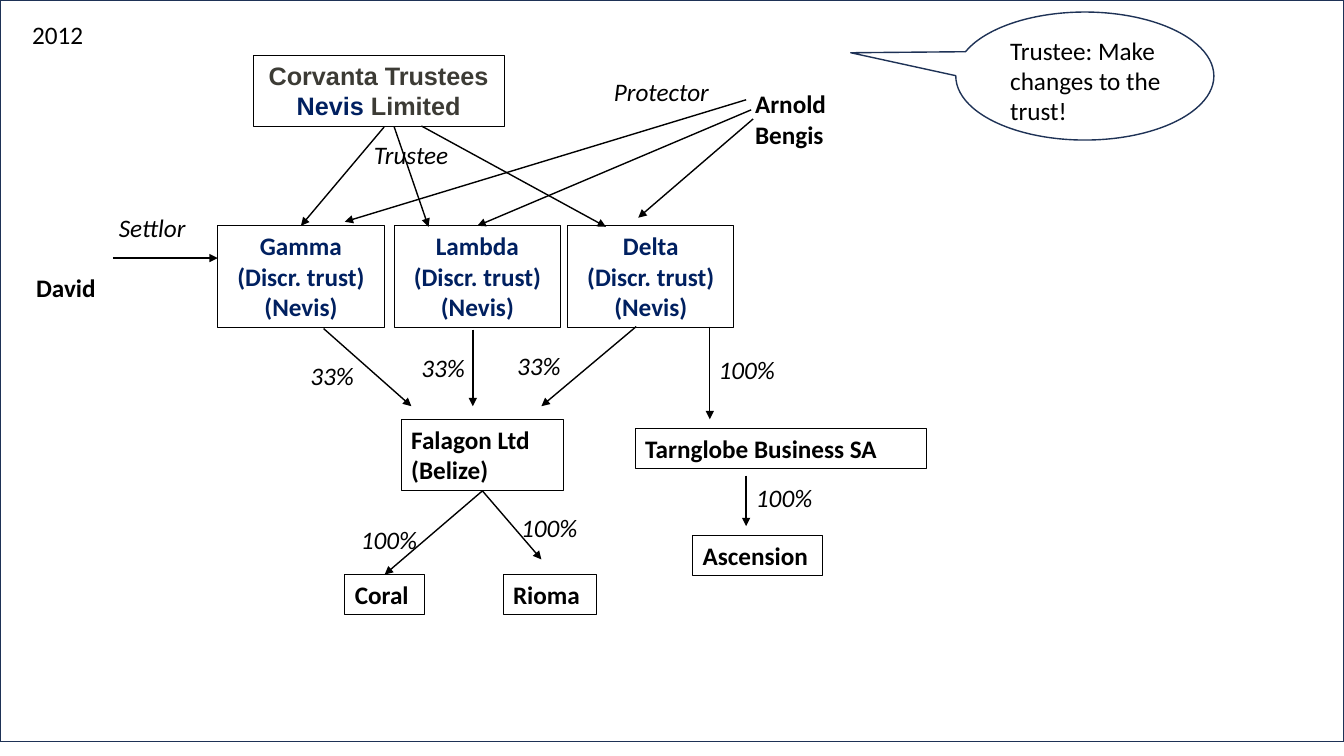
from lxml.etree import SubElement
from pptx import Presentation
from pptx.dml.color import RGBColor
from pptx.enum.shapes import MSO_CONNECTOR, MSO_SHAPE
from pptx.enum.text import MSO_ANCHOR, MSO_AUTO_SIZE, PP_ALIGN
from pptx.oxml.ns import qn
from pptx.util import Inches, Pt

COLORS = {"white": "FFFFFF", "black": "000000", "frame": "1E3256",
          "navy": "002060", "gray": "3C3B35"}

# Text formats
PLAIN = {"name": "Calibri", "size": Pt(18), "color": "black"}
BOLD = {**PLAIN, "bold": True}
ITALIC = {**PLAIN, "italic": True}
TRUST = {**BOLD, "color": "navy"}
TRUSTEE = {**BOLD, "name": "Arial", "color": "gray"}
TRUSTEE_PLACE = {**TRUSTEE, "color": "navy"}

# Content: position in inches, paragraphs of (text, format) runs
FRAME = (0, 0, 13.33, 7.36)
CALLOUT = (9.48, 0.12, 2.56, 1.27)
CALLOUT_TIP = (-0.907, -0.182)
CALLOUT_TEXT = (9.92, 0.3, 1.79, 1.01), "Trustee: Make changes to the trust!"

TRUSTEE_BOX = (2.51, 0.55, 2.49, 0.71)
TRUSTEE_LINES = [[("Corvanta Trustees", TRUSTEE)],
                 [("Nevis", TRUSTEE_PLACE), (" Limited", TRUSTEE)]]

TRUST_TOP, TRUST_SIZE = 2.24, (1.65, 1.01)
TRUST_LEFTS = {"Gamma": 2.16, "Lambda": 3.91, "Delta": 5.63}
TRUST_KIND = "(Discr. trust) (Nevis)"

COMPANIES = {
    "Falagon": ((3.98, 4.16, 1.61, 0.71), ["Falagon Ltd", "(Belize)"]),
    "Tarnglobe": ((6.3, 4.25, 2.89, 0.4), ["Tarnglobe Business SA"]),
    "Coral": ((3.42, 5.7, 0.79, 0.4), ["Coral"]),
    "Rioma": ((4.99, 5.7, 0.93, 0.4), ["Rioma"]),
    "Ascension": ((6.87, 5.31, 1.29, 0.4), ["Ascension"]),
}

LABELS = [
    ((0.22, 0.14, 0.74, 0.4), ["2012"], PLAIN),
    ((0.26, 2.65, 0.86, 0.4), ["David"], BOLD),
    ((7.39, 0.83, 1.02, 0.71), ["Arnold", "Bengis"], BOLD),
    ((3.61, 1.33, 1, 0.4), ["Trustee"], ITALIC),
    ((1.08, 2.06, 0.92, 0.4), ["Settlor"], ITALIC),
    ((5.99, 0.71, 1.21, 0.4), ["Protector"], ITALIC),
]
SHARES = {
    "33%": (0.69, [(2.98, 3.53), (4.08, 3.45), (5.03, 3.43)]),
    "100%": (0.83, [(3.48, 5.15), (5.07, 5.03), (7.4, 4.74), (7.03, 3.47)]),
}

# An arrow end is a point, or a box name with its side
TOP, BOTTOM = 0, 2
ARROWS = [
    # trustee to trusts
    ((3.81, 1.26), ("Gamma", TOP)),
    ((3.91, 1.26), (4.25, 2.25)),
    ((4.18, 1.25), (6.01, 2.25)),
    # settlor
    ((1.12, 2.56), (2.16, 2.56)),
    # protector to trusts
    ((7.4, 0.99), (3.42, 2.2)),
    ((7.45, 1.09), ("Lambda", TOP)),
    ((7.47, 1.18), (6.33, 2.16)),
    # trusts to companies
    ((3.21, 3.26), (4.08, 4.03)),
    ((4.69, 3.27), (4.69, 4.03)),
    ((6.31, 3.24), (5.37, 4.03)),
    ((7.04, 3.24), (7.04, 4.16)),
    # companies to subsidiaries
    (("Falagon", BOTTOM), ("Coral", TOP)),
    (("Falagon", BOTTOM), (5.37, 5.55)),
    ((7.4, 4.72), (7.4, 5.22)),
]

prs = Presentation()
prs.slide_width, prs.slide_height = Inches(13.33), Inches(7.5)
slide = prs.slides.add_slide(prs.slide_layouts[6])
boxes = {}


def rgb(name):
    return RGBColor.from_string(COLORS[name])


def write(holder, paragraphs, align=PP_ALIGN.LEFT, wrap=False):
    frame = holder.text_frame
    frame.word_wrap = wrap
    frame.auto_size = MSO_AUTO_SIZE.SHAPE_TO_FIT_TEXT
    frame.vertical_anchor = MSO_ANCHOR.TOP
    for i, runs in enumerate(paragraphs):
        paragraph = frame.add_paragraph() if i else frame.paragraphs[0]
        paragraph.alignment = align
        for text, style in runs:
            run = paragraph.add_run()
            run.text = text
            for key, value in style.items():
                if key == "color":
                    run.font.color.rgb = rgb(value)
                else:
                    setattr(run.font, key, value)


def outline(kind, at, color="black", width=0.75, fill=None):
    shape = slide.shapes.add_shape(kind, *map(Inches, at))
    shape.shadow.inherit = False
    if fill:
        shape.fill.solid()
        shape.fill.fore_color.rgb = rgb(fill)
    else:
        shape.fill.background()
    shape.line.color.rgb = rgb(color)
    shape.line.width = Pt(width)
    return shape


def label(at, lines, style, wrap=False):
    holder = slide.shapes.add_textbox(*map(Inches, at))
    write(holder, [[(line, style)] for line in lines], wrap=wrap)


def place(end):
    """Point of an arrow end, in EMU."""
    if end[0] not in boxes:
        return Inches(end[0]), Inches(end[1])
    box, side = boxes[end[0]], end[1]
    return box.left + box.width // 2, box.top + (box.height if side == BOTTOM else 0)


def arrow(start, finish):
    line = slide.shapes.add_connector(MSO_CONNECTOR.STRAIGHT, *place(start), *place(finish))
    for end, connect in ((start, line.begin_connect), (finish, line.end_connect)):
        if end[0] in boxes:
            connect(boxes[end[0]], end[1])
    line.line.color.rgb = rgb("black")
    line.line.width = Pt(1)
    SubElement(line.line._get_or_add_ln(), qn("a:tailEnd"), type="triangle")
    SubElement(line._element.spPr, qn("a:effectLst"))


# Frame
outline(MSO_SHAPE.RECTANGLE, FRAME, "frame", 1, "white")

# Trustee and trusts
write(outline(MSO_SHAPE.RECTANGLE, TRUSTEE_BOX), TRUSTEE_LINES, PP_ALIGN.CENTER)
for name, left in TRUST_LEFTS.items():
    boxes[name] = outline(MSO_SHAPE.RECTANGLE, (left, TRUST_TOP, *TRUST_SIZE))
    write(boxes[name], [[(name, TRUST)], [(TRUST_KIND, TRUST)]], PP_ALIGN.CENTER, True)

# Companies
for name, (at, lines) in COMPANIES.items():
    boxes[name] = outline(MSO_SHAPE.RECTANGLE, at)
    write(boxes[name], [[(line, BOLD)] for line in lines])

# Arrows
for start, finish in ARROWS:
    arrow(start, finish)

# People, roles and shares
for at, lines, style in LABELS:
    label(at, lines, style)
for share, (width, corners) in SHARES.items():
    for corner in corners:
        label((*corner, width, 0.4), [share], ITALIC)

# Callout
callout = outline(MSO_SHAPE.OVAL_CALLOUT, CALLOUT, "frame", 1)
for i, offset in enumerate(CALLOUT_TIP):
    callout.adjustments[i] = offset
label(CALLOUT_TEXT[0], [CALLOUT_TEXT[1]], PLAIN, wrap=True)

prs.save("out.pptx")
